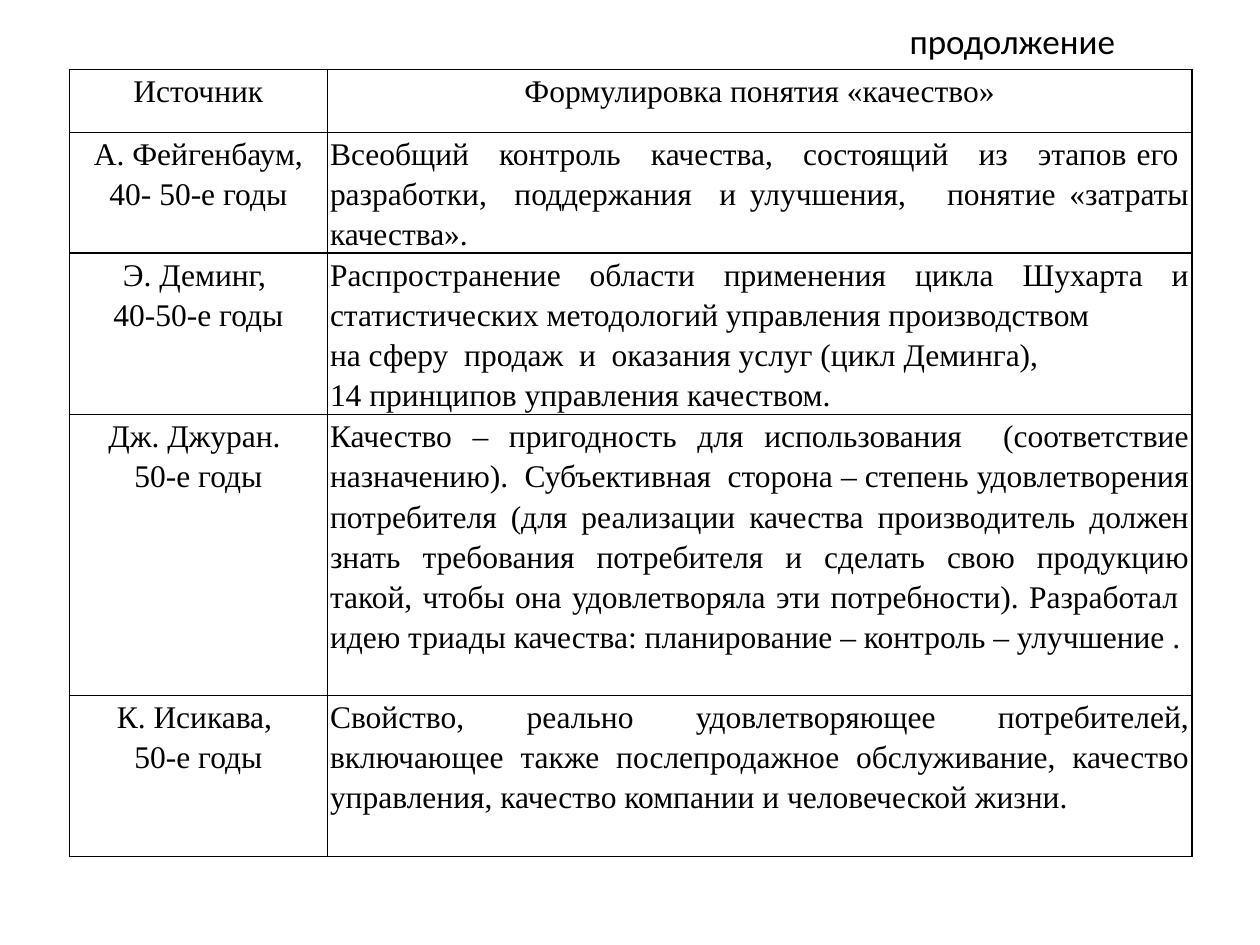
from lxml import etree
from pptx import Presentation
from pptx.dml.color import RGBColor
from pptx.enum.text import MSO_ANCHOR, PP_ALIGN
from pptx.oxml.ns import qn
from pptx.util import Inches, Pt

CENTER, JUSTIFY, RIGHT = PP_ALIGN.CENTER, PP_ALIGN.JUSTIFY, PP_ALIGN.RIGHT
MIDDLE = MSO_ANCHOR.MIDDLE
BLACK = RGBColor(0, 0, 0)

TITLE = "продолжение"
HEADER = ("Источник", "Формулировка понятия «качество»")
DEFINITIONS = [
    ("А. Фейгенбаум, 40- 50-е годы",
     "Всеобщий   контроль   качества,   состоящий   из   этапов его  разработки,  "
     "поддержания  и улучшения,   понятие «затраты качества»."),
    ("Э. Деминг, \n40-50-е годы",
     "Распространение области применения цикла Шухарта и статистических "
     "методологий управления производством \n"
     "на сферу  продаж  и  оказания услуг (цикл Деминга), \n"
     "14 принципов управления качеством."),
    ("Дж. Джуран. \n50-е годы",
     "Качество – пригодность для использования  (соответствие назначению).  "
     "Субъективная  сторона – степень удовлетворения потребителя (для реализации "
     "качества производитель должен знать требования потребителя и сделать свою "
     "продукцию такой, чтобы она удовлетворяла эти потребности). Разработал  идею "
     "триады качества: планирование – контроль – улучшение ."),
    ("К. Исикава, \n50-е годы",
     "Свойство, реально удовлетворяющее потребителей, включающее также "
     "послепродажное обслуживание, качество управления, качество компании и "
     "человеческой жизни. "),
]
COLUMN_WIDTHS = (2.05, 6.86)
ROW_HEIGHTS = (0.5, 0.96, 1.28, 2.23, 1.28)


def format_paragraph(paragraph, alignment, font_name, size):
    paragraph.alignment = alignment
    for span in paragraph.runs:
        span.font.name = font_name
        span.font.size = Pt(size)
        span.font.bold = False
        span.font.color.rgb = BLACK


def add_borders(cell):
    properties = cell._tc.get_or_add_tcPr()
    for position, side in enumerate(("lnL", "lnR", "lnT", "lnB")):
        line = etree.Element(qn(f"a:{side}"), w=str(Pt(1)))
        fill = etree.SubElement(line, qn("a:solidFill"))
        etree.SubElement(fill, qn("a:srgbClr"), val=str(BLACK))
        properties.insert(position, line)


def fill_cell(cell, text, alignment):
    cell.text_frame.text = text
    cell.margin_left = cell.margin_right = Inches(0.02)
    cell.margin_top = cell.margin_bottom = 0
    cell.fill.background()
    for paragraph in cell.text_frame.paragraphs:
        paragraph.line_spacing = 1.15
        format_paragraph(paragraph, alignment, "Times New Roman", 18)
    add_borders(cell)


def add_title(page):
    title = page.shapes.title
    title.left, title.top = Inches(0.78), Inches(0.16)
    title.width, title.height = Inches(8.17), Inches(0.32)
    frame = title.text_frame
    frame.text = TITLE
    frame.vertical_anchor = MIDDLE
    format_paragraph(frame.paragraphs[0], RIGHT, "Calibri", 20)


def add_definitions(page):
    rows = [HEADER] + DEFINITIONS
    table = page.shapes.add_table(
        len(rows), len(HEADER), Inches(0.55), Inches(0.55),
        Inches(sum(COLUMN_WIDTHS)), Inches(sum(ROW_HEIGHTS))).table
    table.first_row = table.horz_banding = False
    for column, width in zip(table.columns, COLUMN_WIDTHS):
        column.width = Inches(width)
    for row, height in zip(table.rows, ROW_HEIGHTS):
        row.height = Inches(height)
    for row_index, (source, definition) in enumerate(rows):
        fill_cell(table.cell(row_index, 0), source, CENTER)
        fill_cell(table.cell(row_index, 1), definition,
                  JUSTIFY if row_index else CENTER)


def main():
    deck = Presentation()
    deck.slide_width, deck.slide_height = Inches(10), Inches(7.5)
    page = deck.slides.add_slide(deck.slide_layouts[5])
    add_title(page)
    add_definitions(page)
    deck.save("out.pptx")


if __name__ == "__main__":
    main()
